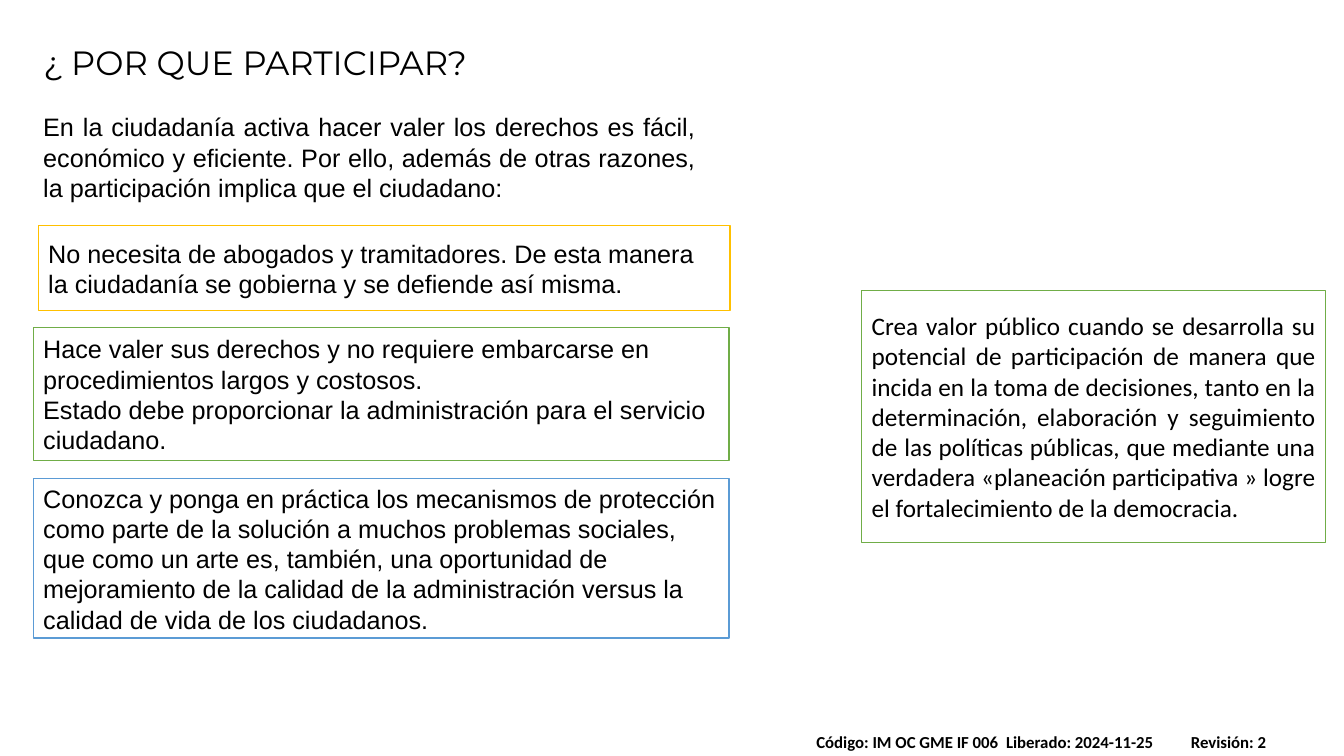
from typing import NamedTuple, Optional

import pptx
import pptx.dml.color
import pptx.enum.shapes
import pptx.enum.text
import pptx.oxml
import pptx.oxml.ns
import pptx.util

Pt = pptx.util.Pt
RGBColor = pptx.dml.color.RGBColor
Align = pptx.enum.text.PP_ALIGN
Anchor = pptx.enum.text.MSO_ANCHOR
Fit = pptx.enum.text.MSO_AUTO_SIZE

BLACK = RGBColor(0x00, 0x00, 0x00)
WHITE = RGBColor(0xFF, 0xFF, 0xFF)
GOLD = RGBColor(0xFF, 0xC0, 0x00)
GREEN = RGBColor(0x70, 0xAD, 0x47)
BLUE = RGBColor(0x5B, 0x9B, 0xD5)


class Style(NamedTuple):
    face: str
    size: float = 18
    bold: bool = False
    align: Align = Align.LEFT


class Block(NamedTuple):
    left: float
    top: float
    width: float
    height: float
    style: Style
    lines: list[str]
    edge: Optional[RGBColor] = None


PLAIN = Style("Arial")
TITLE = Block(23.76, 26.64, 352, 36, Style("Montserrat", 24),
              ["¿ POR QUE PARTICIPAR?"])
INTRO = Block(23.76, 76.32, 480, 72.7, Style("Arial", align=Align.JUSTIFY), [
    "En la ciudadanía activa hacer valer los derechos es fácil, económico y "
    "eficiente. Por ello, además de otras razones, la participación implica "
    "que el ciudadano:"])
FOOTER = Block(576, 519, 366.5, 21.6, Style("Calibri", 12, True),
               ["Código: IM OC GME IF 006\tLiberado: 2024-11-25\tRevisión: 2"])
STOPS = (135.5, 267.5)
CARDS = [
    Block(27.36, 161.28, 494, 60.5, PLAIN, [
        "No necesita de abogados y tramitadores. De esta manera la ciudadanía "
        "se gobierna y se defiende así misma."], GOLD),
    Block(23.76, 234, 497, 95, PLAIN, [
        "Hace valer sus derechos y no requiere embarcarse en procedimientos "
        "largos y costosos.",
        "Estado debe proporcionar la administración para el servicio "
        "ciudadano."], GREEN),
    Block(23.76, 342, 497, 113.8, PLAIN, [
        "Conozca y ponga en práctica los mecanismos de protección como parte "
        "de la solución a muchos problemas sociales, que como un arte es, "
        "también, una oportunidad de mejoramiento de la calidad de la "
        "administración versus la calidad de vida de los ciudadanos."], BLUE),
    Block(615.6, 207.36, 331.2, 180, Style("Calibri", align=Align.JUSTIFY), [
        "Crea valor público cuando se desarrolla su potencial de participación "
        "de manera que incida en la toma de decisiones, tanto en la "
        "determinación, elaboración y seguimiento de las políticas públicas, "
        "que mediante una verdadera «planeación participativa » logre el "
        "fortalecimiento de la democracia."], GREEN),
]


def bounds(block: Block) -> list[int]:
    return [Pt(side) for side in block[:4]]


def write(frame, block: Block, anchor: Anchor, wrap: bool = True) -> None:
    frame.auto_size = Fit.NONE
    frame.word_wrap = wrap
    frame.vertical_anchor = anchor
    for index, line in enumerate(block.lines):
        para = frame.add_paragraph() if index else frame.paragraphs[0]
        para.alignment = block.style.align
        run = para.add_run()
        run.text = line
        font = run.font
        font.name = block.style.face
        font.size = Pt(block.style.size)
        font.bold = block.style.bold
        font.color.rgb = BLACK


def add_text(slide, block: Block):
    box = slide.shapes.add_textbox(*bounds(block))
    write(box.text_frame, block, Anchor.TOP)
    return box


def add_card(slide, block: Block) -> None:
    kind = pptx.enum.shapes.MSO_SHAPE.RECTANGLE
    card = slide.shapes.add_shape(kind, *bounds(block))
    card.shadow.inherit = False
    card.fill.solid()
    card.fill.fore_color.rgb = WHITE
    card.line.color.rgb = block.edge
    card.line.width = Pt(1)
    write(card.text_frame, block, Anchor.MIDDLE)


def add_tabs(para, stops: tuple[float, ...]) -> None:
    props = para._p.get_or_add_pPr()
    tabs = pptx.oxml.ns.qn("a:tabLst")
    group = props.makeelement(tabs, {})
    props.append(group)
    for stop in stops:
        tab = group.makeelement(pptx.oxml.ns.qn("a:tab"),
                                {"pos": str(Pt(stop)), "algn": "l"})
        group.append(tab)


def main() -> None:
    deck = pptx.Presentation()
    deck.slide_width, deck.slide_height = Pt(960), Pt(540)
    slide = deck.slides.add_slide(deck.slide_layouts.get_by_name("Title Only"))

    # Heading and introduction
    title = slide.shapes.title
    title.left, title.top, title.width, title.height = bounds(TITLE)
    write(title.text_frame, TITLE, Anchor.TOP, wrap=False)
    add_text(slide, INTRO)

    # Framed reasons
    for card in CARDS:
        add_card(slide, card)

    # Document control line
    footer = add_text(slide, FOOTER)
    add_tabs(footer.text_frame.paragraphs[0], STOPS)

    deck.save("out.pptx")


if __name__ == "__main__":
    main()
